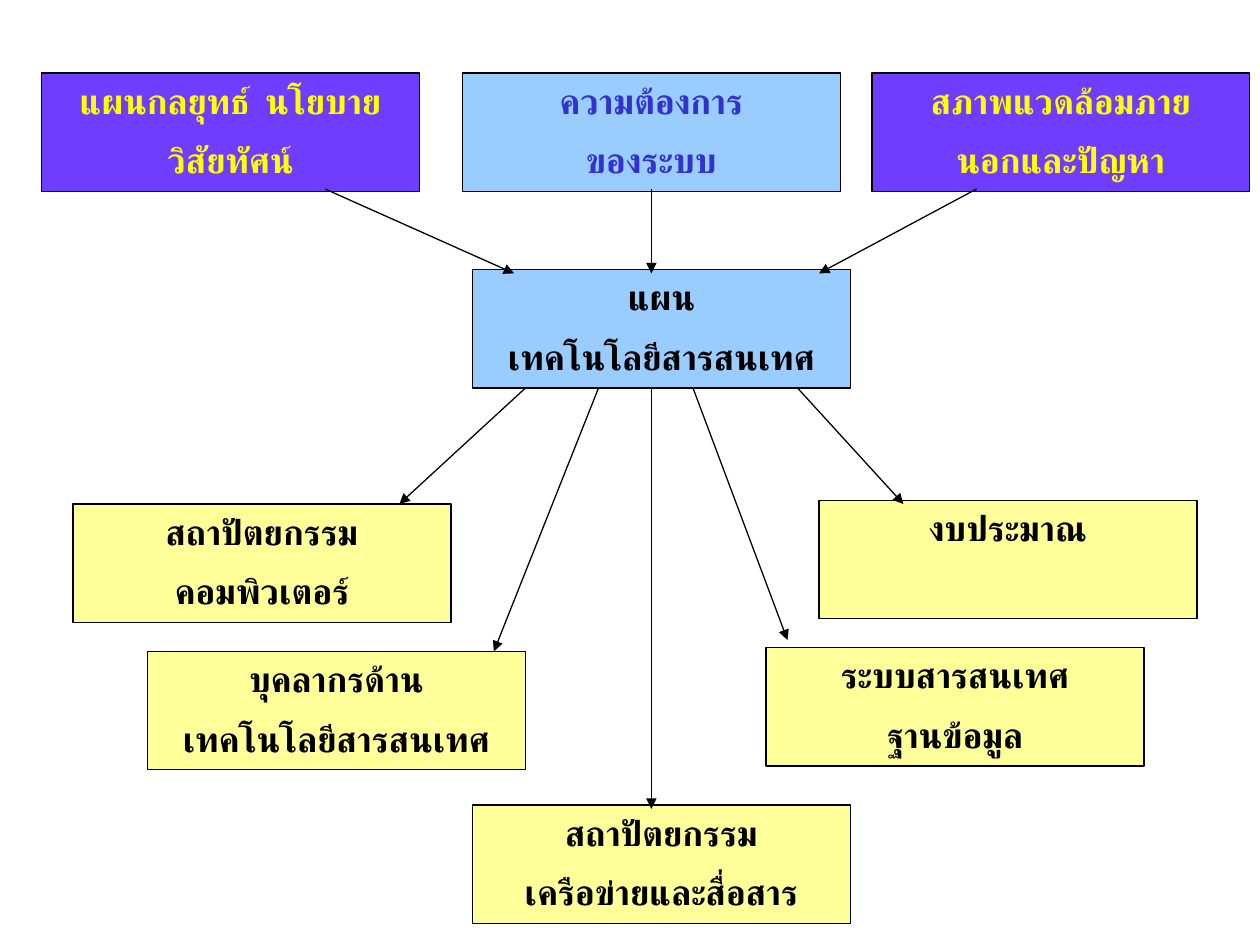
import pptx
import pptx.util
from pptx.dml.color import RGBColor
from pptx.enum.shapes import MSO_CONNECTOR, MSO_SHAPE
from pptx.enum.text import MSO_ANCHOR, PP_ALIGN
from pptx.oxml.ns import qn
from pptx.util import Inches
from lxml import etree

FONT = "Cabin"
BOX_W, BOX_H = 3, 0.94
COLORS = {
    "violet": "703DFF",
    "sky": "99CCFF",
    "cream": "FFFF99",
    "yellow": "FFFF00",
    "blue": "3333CC",
    "black": "000000",
}


def rgb(name):
    return RGBColor.from_string(COLORS[name])


prs = pptx.Presentation()
prs.slide_width, prs.slide_height = Inches(10), Inches(7.5)
s = prs.slides.add_slide(prs.slide_layouts[6])

# left, top, fill, text colour, lines
boxes = [
    # Inputs to the plan
    (0.33, 0.58, "violet", "yellow", ["แผนกลยุทธ์  นโยบาย", "วิสัยทัศน์"]),
    (3.67, 0.58, "sky", "blue", ["ความต้องการ", "ของระบบ"]),
    (6.92, 0.58, "violet", "yellow", ["สภาพแวดล้อมภาย", "นอกและปัญหา"]),
    # The plan
    (3.75, 2.14, "sky", "black", ["แผน", "เทคโนโลยีสารสนเทศ"]),
    # Parts of the plan
    (0.58, 4, "cream", "black", ["สถาปัตยกรรม", "คอมพิวเตอร์"]),
    (6.5, 3.97, "cream", "black", ["งบประมาณ"]),
    (1.17, 5.17, "cream", "black", ["บุคลากรด้าน", "เทคโนโลยีสารสนเทศ"]),
    (6.08, 5.14, "cream", "black", ["ระบบสารสนเทศ", "ฐานข้อมูล"]),
    (3.75, 6.39, "cream", "black", ["สถาปัตยกรรม", "เครือข่ายและสื่อสาร"]),
]
for left, top, fill, color, lines in boxes:
    sp = s.shapes.add_shape(MSO_SHAPE.RECTANGLE, Inches(left), Inches(top),
                            Inches(BOX_W), Inches(BOX_H))
    sp.shadow.inherit = False
    sp.fill.solid()
    sp.fill.fore_color.rgb = rgb(fill)
    sp.line.color.rgb = rgb("black")
    sp.line.width = pptx.util.Pt(0.75)
    tf = sp.text_frame
    tf.word_wrap = True
    tf.vertical_anchor = MSO_ANCHOR.TOP
    tf.text = "\n".join(lines)
    for i, p in enumerate(tf.paragraphs):
        p.alignment = PP_ALIGN.CENTER
        p.space_before = pptx.util.Pt(10 if i else 0)
        r = p.runs[0]
        r.font.name = FONT
        r.font.size = pptx.util.Pt(20)
        r.font.bold = True
        r.font.color.rgb = rgb(color)
        # Thai text takes the complex-script font
        etree.SubElement(r.font._element, qn("a:cs"), typeface=FONT)

# x1, y1, x2, y2
arrows = [
    # Inputs to plan
    (2.58, 1.5, 4.08, 2.17),
    (5.17, 1.5, 5.17, 2.17),
    (7.75, 1.5, 6.5, 2.17),
    # Plan to parts
    (5.17, 3.08, 5.17, 6.42),
    (4.17, 3.08, 3.17, 4),
    (6.33, 3.08, 7.17, 4),
    (4.75, 3.08, 3.92, 5.17),
    (5.5, 3.08, 6.25, 5.08),
]
for ends in arrows:
    cx = s.shapes.add_connector(MSO_CONNECTOR.STRAIGHT, *map(Inches, ends))
    cx.line.color.rgb = rgb("black")
    cx.line.width = pptx.util.Pt(0.75)
    etree.SubElement(cx.line._get_or_add_ln(), qn("a:tailEnd"), type="triangle")
    etree.SubElement(cx._element.spPr, qn("a:effectLst"))

prs.save("out.pptx")
